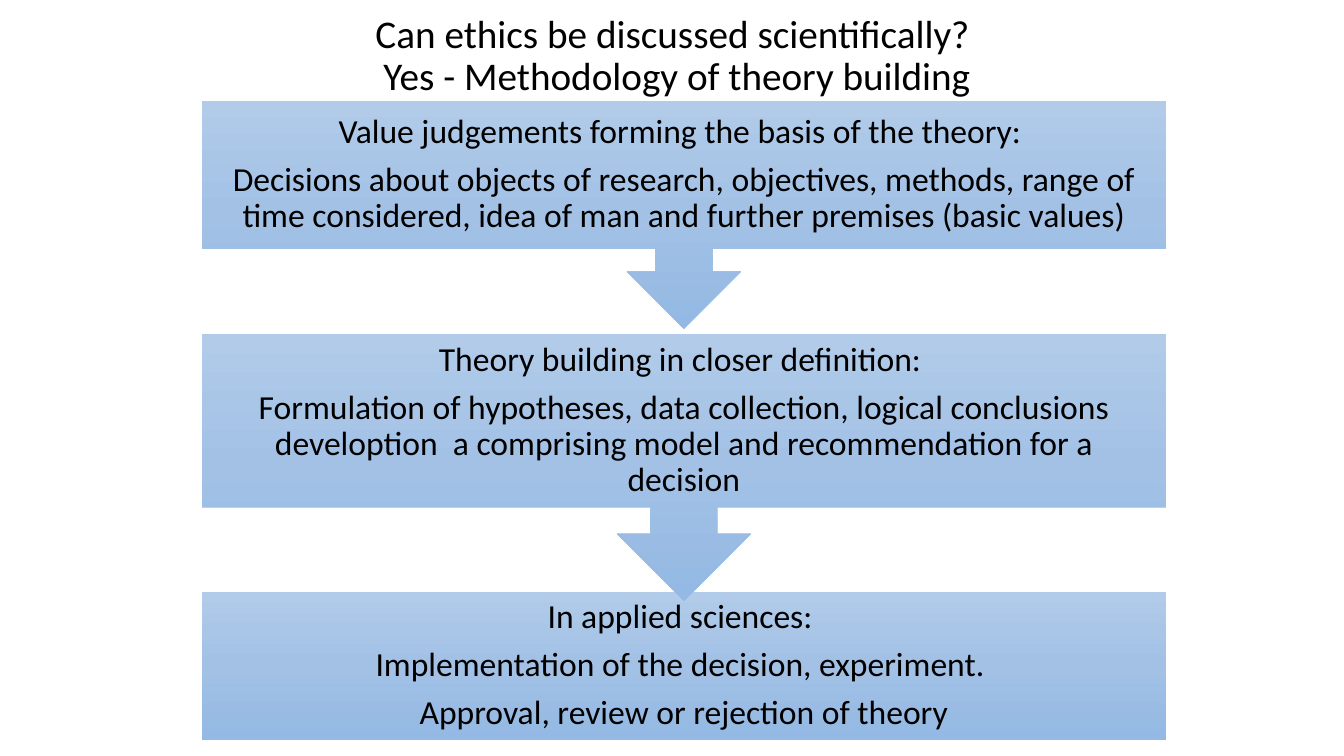
"""Build a slide showing theory building as three steps linked by arrows."""
import copy

import pptx
import pptx.dml.color
import pptx.enum.shapes
import pptx.enum.text
import pptx.oxml.ns
import pptx.util

Pt = pptx.util.Pt
SHAPES = pptx.enum.shapes.MSO_SHAPE
STEP_LEFT, STEP_WIDTH = 144, 689
BODY_SHARE = 0.65
STEP_INSET = 13.7
GRADIENT = [(0, "B1CBE9"), (0.5, "A3C1E5"), (1, "93B9E4")]
TITLE = ["Can ethics be discussed scientifically? ",
         "Yes - Methodology of theory building"]
STEPS = [
    (SHAPES.RECTANGLE, 422.6, 105.8, [
        "In applied sciences: ",
        "Implementation of the decision, experiment. ",
        "Approval, review or rejection of theory"]),
    (SHAPES.DOWN_ARROW_CALLOUT, 238.3, 190.8, [
        "Theory building in closer definition: ",
        "Formulation of hypotheses, data collection, logical conclusions "
        "develoption  a comprising model and recommendation for a decision"]),
    (SHAPES.DOWN_ARROW_CALLOUT, 72, 162.7, [
        "Value judgements forming the basis of the theory: ",
        "Decisions about objects of research, objectives, methods, range of "
        "time considered, idea of man and further premises (basic values)"]),
]


def color(hex_string):
    """Return the colour for a hex string."""
    return pptx.dml.color.RGBColor.from_string(hex_string)


def fill_gradient(shape):
    """Fill a shape with the three-stop gradient from top to bottom."""
    shape.fill.gradient()
    shape.fill.gradient_angle = 270
    first_stop = next(shape.element.spPr.iter(pptx.oxml.ns.qn("a:gs")))
    first_stop.addnext(copy.deepcopy(first_stop))
    for stop, (position, hex_string) in zip(shape.fill.gradient_stops, GRADIENT):
        stop.position = position
        stop.color.rgb = color(hex_string)


def add_run(paragraph, text, size):
    """Add a black Calibri run to a paragraph."""
    run = paragraph.add_run()
    run.text = text
    run.font.name = "Calibri"
    run.font.size = Pt(size)
    run.font.color.rgb = color("000000")


def add_text_box(slide, left, top, width, height):
    """Add a wrapping text box with its text anchored in the middle."""
    box = slide.shapes.add_textbox(Pt(left), Pt(top), Pt(width), Pt(height))
    box.text_frame.word_wrap = True
    box.text_frame.vertical_anchor = pptx.enum.text.MSO_ANCHOR.MIDDLE
    return box


def format_paragraph(paragraph):
    """Centre a paragraph and tighten its lines."""
    paragraph.alignment = pptx.enum.text.PP_ALIGN.CENTER
    paragraph.line_spacing = 0.9


def add_step(slide, kind, top, height, texts):
    """Add one step: a gradient shape with its text over the body."""
    shape = slide.shapes.add_shape(
        kind, Pt(STEP_LEFT), Pt(top), Pt(STEP_WIDTH), Pt(height))
    shape.shadow.inherit = False
    shape.line.fill.background()
    fill_gradient(shape)
    body = height if kind == SHAPES.RECTANGLE else height * BODY_SHARE
    frame = add_text_box(slide, STEP_LEFT, top, STEP_WIDTH, body).text_frame
    frame.margin_left = frame.margin_right = Pt(STEP_INSET)
    frame.margin_top = frame.margin_bottom = Pt(STEP_INSET)
    for index, text in enumerate(texts):
        paragraph = frame.add_paragraph() if index else frame.paragraphs[0]
        format_paragraph(paragraph)
        paragraph.space_after = Pt(8.4)
        add_run(paragraph, text, 24)


def add_title(slide):
    """Add the two-line title on white."""
    box = add_text_box(slide, 139, 10, STEP_WIDTH, 61.2)
    box.fill.solid()
    box.fill.fore_color.rgb = color("FFFFFF")
    paragraph = box.text_frame.paragraphs[0]
    format_paragraph(paragraph)
    for index, line in enumerate(TITLE):
        if index:
            paragraph.add_line_break()
        add_run(paragraph, line, 28)


def main():
    """Build and save the presentation."""
    presentation = pptx.Presentation()
    presentation.slide_width, presentation.slide_height = Pt(960), Pt(540)
    slide = presentation.slides.add_slide(presentation.slide_layouts[6])
    for step in STEPS:
        add_step(slide, *step)
    add_title(slide)
    presentation.save("out.pptx")


if __name__ == "__main__":
    main()
